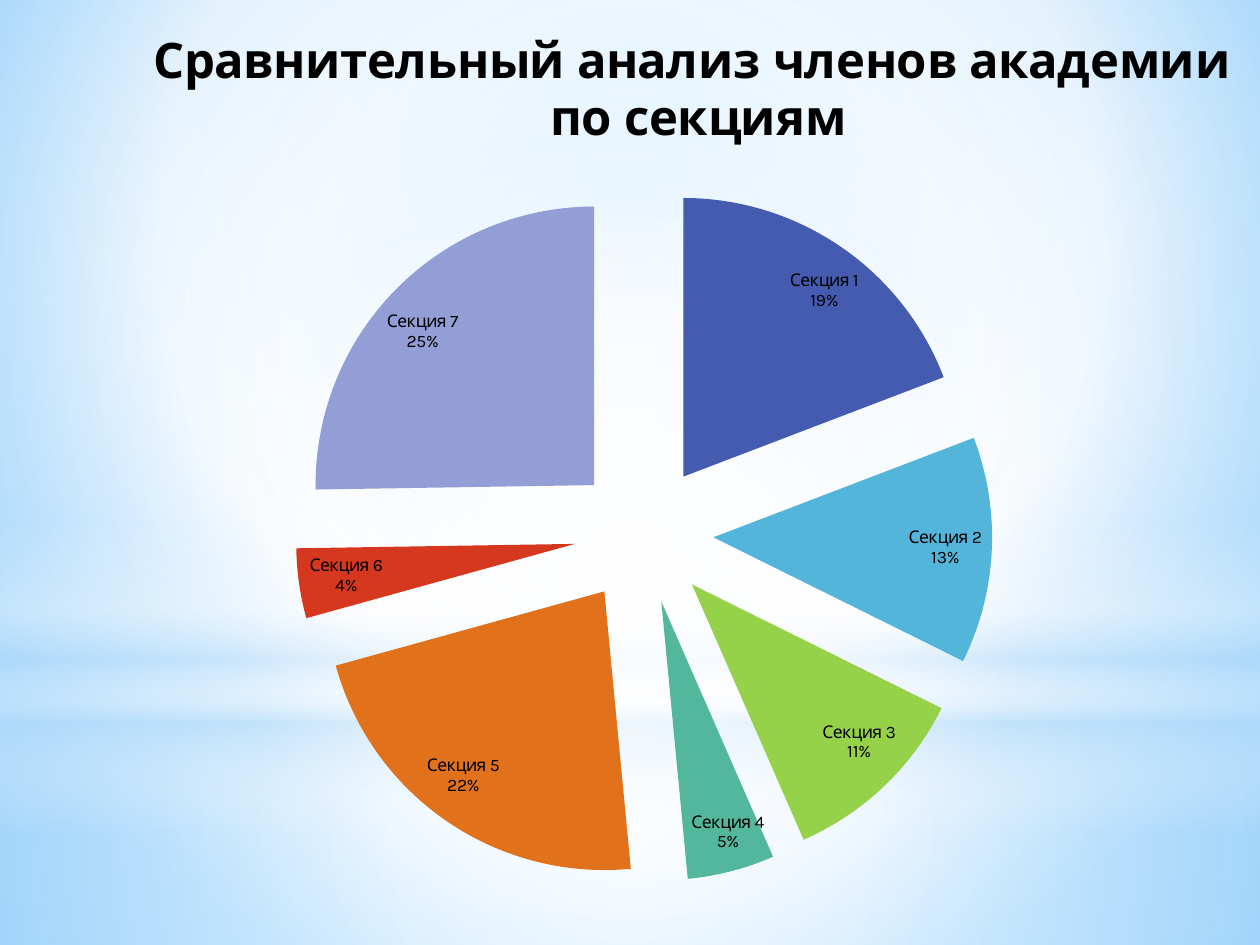
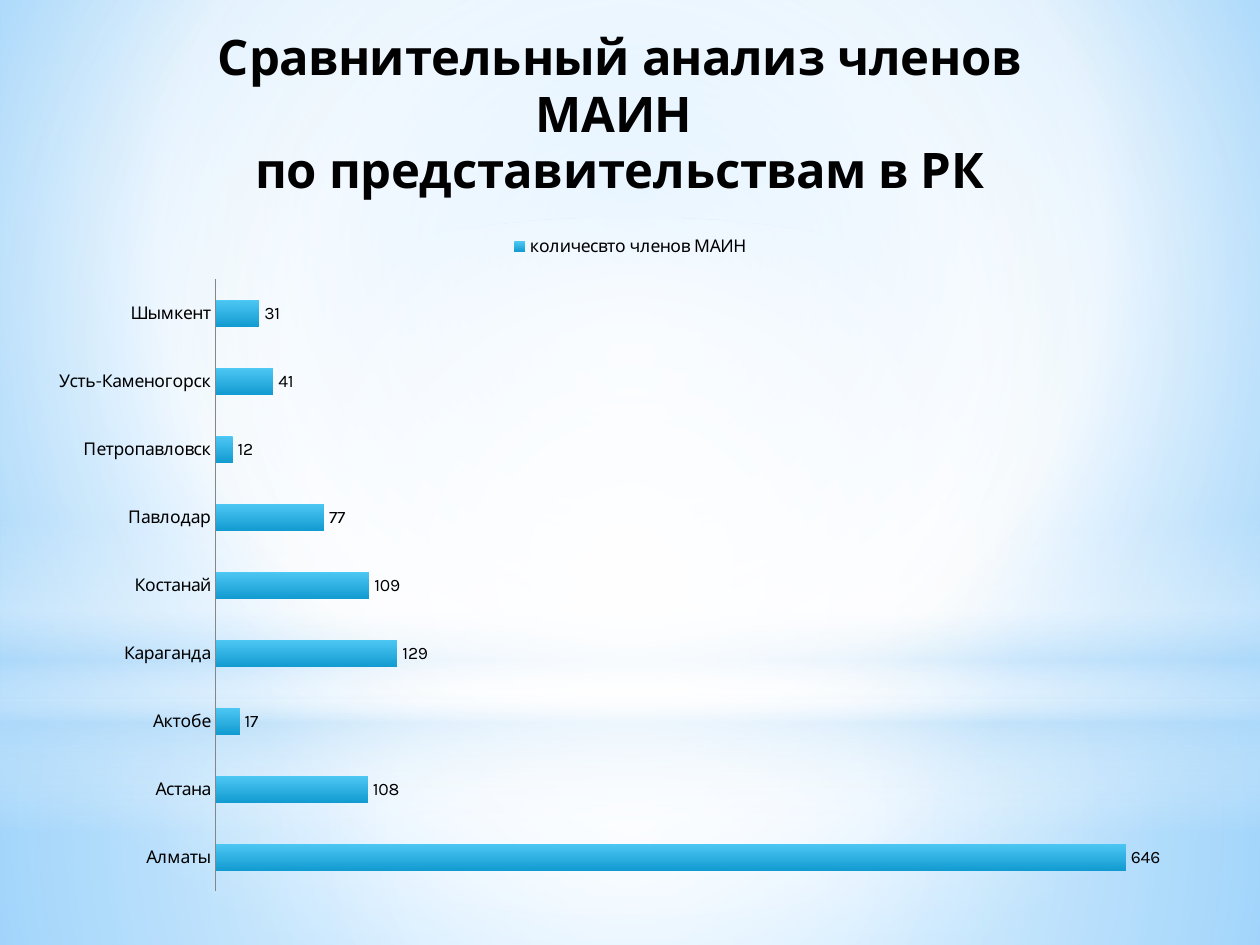
from dataclasses import dataclass
from typing import Optional

from lxml.etree import SubElement
from pptx import Presentation
from pptx.chart.data import CategoryChartData
from pptx.dml.color import RGBColor
from pptx.enum.chart import XL_CHART_TYPE as ChartType
from pptx.enum.chart import XL_LABEL_POSITION as LabelPos
from pptx.enum.chart import XL_LEGEND_POSITION as LegendPos
from pptx.enum.chart import XL_TICK_MARK as TickMark
from pptx.enum.shapes import MSO_SHAPE as Preset
from pptx.oxml import parse_xml
from pptx.oxml.ns import nsdecls, qn
from pptx.util import Inches, Pt

WIDTH, HEIGHT = Inches(10), Inches(7.5)
FONT = "Karla"
COLORS = {
    "text": "000000", "axis": "868686", "white": "FFFFFF", "haze": "B4DCFA",
    "sky": "9ED5FF", "deep_sky": "5BB9FF", "bar_top": "4EC8F4", "bar_base": "129BD1",
}
SECTION_COLORS = ["455BB0", "53B5D9", "95D24A", "53B79B", "E1721B", "D6381F", "939ED6"]
CITIES = {
    "Алматы": 646, "Астана": 108, "Актобе": 17, "Караганда": 129, "Костанай": 109,
    "Павлодар": 77, "Петропавловск": 12, "Усть-Каменогорск": 41, "Шымкент": 31,
}


@dataclass
class Box:
    x: float
    y: float
    w: float
    h: float

    def emu(self) -> tuple[int, ...]:
        return (int(self.x * WIDTH), int(self.y * HEIGHT),
                int(self.w * WIDTH), int(self.h * HEIGHT))


@dataclass
class Gradient:
    stops: list[tuple[int, str, int]]
    focus: Optional[tuple[int, int, int, int]] = None

    def xml(self):
        stops = "".join(
            f'<a:gs pos="{pos * 1000}"><a:srgbClr val="{COLORS[color]}">'
            f'<a:alpha val="{alpha * 1000}"/></a:srgbClr></a:gs>'
            for pos, color, alpha in self.stops)
        shade = '<a:lin ang="5400000" scaled="0"/>'
        if self.focus:
            l, t, r, b = (side * 1000 for side in self.focus)
            shade = (f'<a:path path="circle"><a:fillToRect l="{l}" t="{t}" '
                     f'r="{r}" b="{b}"/></a:path>')
        return parse_xml(f'<a:gradFill {nsdecls("a")} rotWithShape="1">'
                         f'<a:gsLst>{stops}</a:gsLst>{shade}</a:gradFill>')


@dataclass
class Glow:
    preset: Preset
    box: Box
    gradient: Gradient


@dataclass
class ChartSpec:
    kind: ChartType
    box: Box
    title: str
    title_at: tuple[float, float]
    series: str
    values: dict[str, int]


CENTRE = (50, 50, 50, 50)
BACKDROP = Gradient([(0, "sky", 100), (60, "white", 100), (100, "deep_sky", 100)],
                    (20, 10, 20, 60))
GLOWS = [
    Glow(Preset.RECTANGLE, Box(0, 0.74, 1, 0.26),
         Gradient([(0, "white", 91), (37, "white", 76), (100, "haze", 79)], CENTRE)),
    Glow(Preset.RECTANGLE, Box(0, 0, 1, 0.74),
         Gradient([(0, "white", 89), (48, "white", 62), (100, "haze", 79)], CENTRE)),
    Glow(Preset.RECTANGLE, Box(0, 0.55, 1, 0.33),
         Gradient([(0, "white", 0), (29, "white", 30), (45, "haze", 40),
                   (55, "white", 26), (65, "haze", 60), (100, "white", 0)])),
    Glow(Preset.OVAL, Box(0, 0.23, 1, 0.74),
         Gradient([(0, "white", 100), (56, "white", 0)], CENTRE)),
]
SECTIONS_CHART = ChartSpec(
    ChartType.PIE, Box(-0.075, 0, 1.138, 0.983),
    "Сравнительный анализ членов академии \nпо секциям", (0.17, 0.03), "Series 1",
    {f"Секция {i}": share for i, share in enumerate([19, 13, 11, 5, 22, 4, 25], 1)})
CITIES_CHART = ChartSpec(
    ChartType.BAR_CLUSTERED, Box(0.028, 0.017, 0.945, 0.945),
    "Сравнительный анализ членов МАИН \nпо представительствам в РК", (0.15, 0.01),
    "количесвто членов МАИН", CITIES)


def rgb(value: str) -> RGBColor:
    return RGBColor.from_string(value)


def set_gradient(holder, gradient: Gradient) -> None:
    blank = holder.find(qn("a:noFill"))
    holder.replace(blank, gradient.xml())


def paint_master(prs, s) -> None:
    master = prs.slide_master
    master.background.fill.background()
    set_gradient(master.element.find(".//" + qn("p:bgPr")), BACKDROP)
    for i, glow in enumerate(GLOWS):
        sp = s.shapes.add_shape(glow.preset, *glow.box.emu())
        sp.shadow.inherit = False
        sp.fill.background()
        set_gradient(sp.element.spPr, glow.gradient)
        sp.line.fill.background()
        master.shapes.element.insert(2 + i, sp.element)


def set_layout(parent, mode: str, **shares: float) -> None:
    layout = parent.find(qn("c:layout"))
    if layout is None:
        layout = parse_xml(f'<c:layout {nsdecls("c")}/>')
        parent.insert(1 if parent.find(qn("c:tx")) is not None else 0, layout)
    manual = SubElement(layout, qn("c:manualLayout"))
    if mode == "inner":
        SubElement(manual, qn("c:layoutTarget")).set("val", mode)
    for axis in "xy":
        SubElement(manual, qn(f"c:{axis}Mode")).set("val", "edge")
    for name, share in shares.items():
        SubElement(manual, qn(f"c:{name}")).set("val", str(share))


def add_chart(s, spec: ChartSpec):
    data = CategoryChartData()
    data.categories = list(spec.values)
    data.add_series(spec.series, list(spec.values.values()))
    chart = s.shapes.add_chart(spec.kind, *spec.box.emu(), data).chart
    chart.font.name = FONT
    chart.font.size = Pt(10)
    chart.font.color.rgb = rgb(COLORS["text"])
    chart.has_title = True
    title = chart.chart_title
    title.include_in_layout = False
    title.text_frame.text = spec.title
    for p in title.text_frame.paragraphs:
        for r in p.runs:
            r.font.size = Pt(28)
            r.font.bold = True
            r.font.name = FONT
            r.font.color.rgb = rgb(COLORS["text"])
    x, y = spec.title_at
    set_layout(title.element if hasattr(title, "element") else title._element,
               "title", x=x, y=y)
    return chart


def add_sections_slide(s) -> None:
    chart = add_chart(s, SECTIONS_CHART)
    chart.has_legend = False
    plot = chart.plots[0]
    plot.vary_by_categories = True
    plot_area = chart.element.find(".//" + qn("c:plotArea"))
    set_layout(plot_area, "inner", x=0.26, y=0.2, w=0.51, h=0.75)
    plot.has_data_labels = True
    labels = plot.data_labels
    labels.show_category_name = True
    labels.show_percentage = True
    labels.show_value = False
    labels.position = LabelPos.BEST_FIT
    series = plot.series[0]
    for i, color in enumerate(SECTION_COLORS):
        fill = series.points[i].format.fill
        fill.solid()
        fill.fore_color.rgb = rgb(color)
    explosion = parse_xml(f'<c:explosion {nsdecls("c")} val="25"/>')
    series.points[0].format
    series_xml = chart.element.find(".//" + qn("c:ser"))
    series_xml.find(qn("c:dPt")).addprevious(explosion)


def add_cities_slide(s) -> None:
    chart = add_chart(s, CITIES_CHART)
    chart.has_legend = True
    chart.legend.position = LegendPos.TOP
    chart.legend.include_in_layout = False
    plot = chart.plots[0]
    plot.vary_by_categories = False
    plot.gap_width = 150
    plot.overlap = -25
    plot.has_data_labels = True
    plot.data_labels.show_value = True
    plot.data_labels.position = LabelPos.OUTSIDE_END
    series = plot.series[0]
    series.invert_if_negative = False
    series.format.fill.background()
    set_gradient(chart.element.find(".//" + qn("c:ser")).find(qn("c:spPr")),
                 Gradient([(0, "bar_top", 100), (100, "bar_base", 100)]))
    axis = chart.category_axis
    axis.major_tick_mark = axis.minor_tick_mark = TickMark.NONE
    axis.format.line.color.rgb = rgb(COLORS["axis"])
    chart.value_axis.has_major_gridlines = False
    chart.value_axis.visible = False


def main() -> None:
    prs = Presentation()
    prs.slide_width, prs.slide_height = WIDTH, HEIGHT
    blank = prs.slide_layouts[6]
    sections, cities = (prs.slides.add_slide(blank) for _ in range(2))
    paint_master(prs, sections)
    add_sections_slide(sections)
    add_cities_slide(cities)
    prs.save("out.pptx")


if __name__ == "__main__":
    main()
